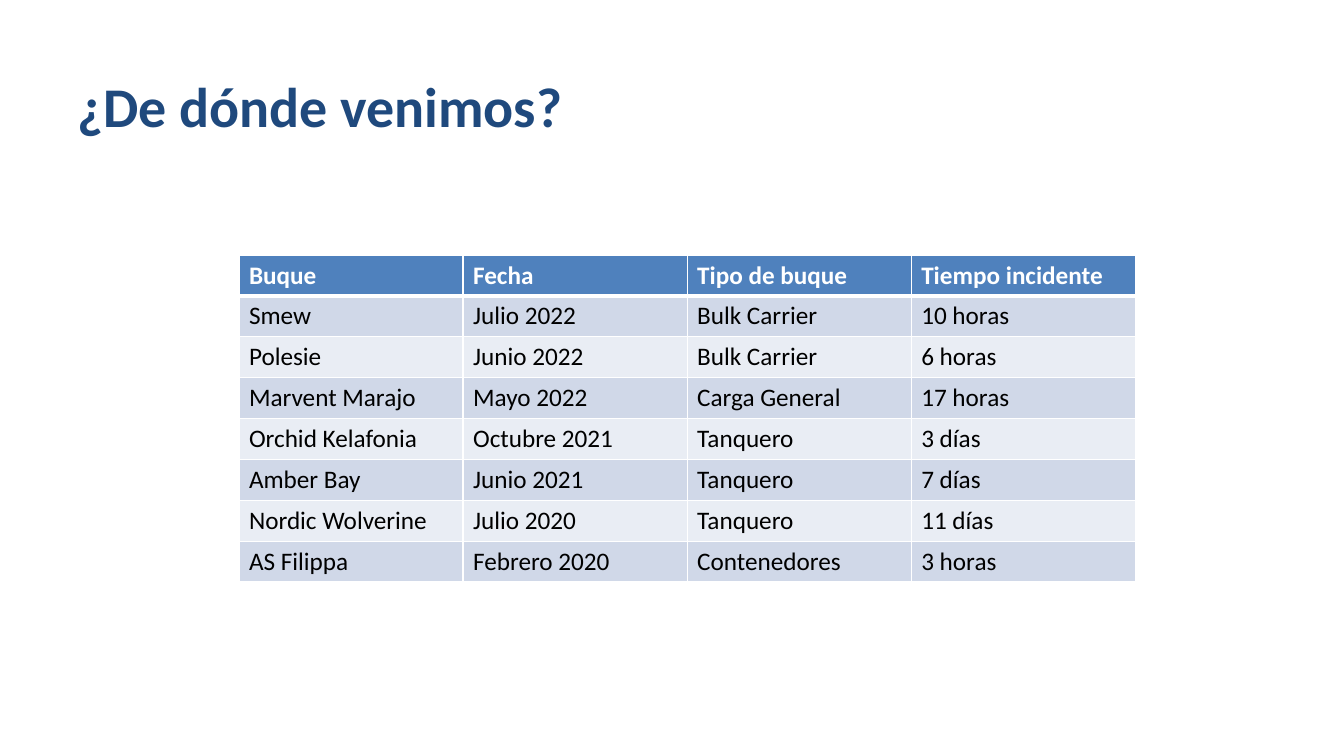
from pptx import Presentation
from pptx.dml.color import RGBColor
from pptx.enum.text import MSO_ANCHOR, MSO_AUTO_SIZE, PP_ALIGN
from pptx.oxml import parse_xml
from pptx.oxml.ns import nsdecls
from pptx.util import Inches, Pt

SHIPS = [
    ("Buque", "Fecha", "Tipo de buque", "Tiempo incidente"),
    ("Smew", "Julio 2022", "Bulk Carrier", "10 horas"),
    ("Polesie", "Junio 2022", "Bulk Carrier", "6 horas"),
    ("Marvent Marajo", "Mayo 2022", "Carga General", "17 horas"),
    ("Orchid Kelafonia", "Octubre 2021", "Tanquero", "3 días"),
    ("Amber Bay", "Junio 2021", "Tanquero", "7 días"),
    ("Nordic Wolverine", "Julio 2020", "Tanquero", "11 días"),
    ("AS Filippa", "Febrero 2020", "Contenedores", "3 horas"),
]
HEAD = "4F81BD"
BANDS = ("E9EDF4", "D0D8E8")


def color(code):
    return RGBColor.from_string(code)


def style(para, size, code, bold):
    font = para.font
    font.name, font.size, font.bold = "Calibri", Pt(size), bold
    font.color.rgb = color(code)


def add_title(slide, text, left, top, width, height):
    title = slide.shapes.title
    title.left, title.top = Inches(left), Inches(top)
    title.width, title.height = Inches(width), Inches(height)
    frame = title.text_frame
    frame.text = text
    frame.word_wrap = True
    frame.auto_size = MSO_AUTO_SIZE.NONE
    frame.vertical_anchor = MSO_ANCHOR.MIDDLE
    para = frame.paragraphs[0]
    para.alignment = PP_ALIGN.LEFT
    style(para, 40, "1F497D", True)


def add_edges(cell, widths):
    """Draw white borders; widths are points for left, right, top, bottom."""
    props = cell._tc.get_or_add_tcPr()
    for spot, (side, width) in enumerate(zip("LRTB", widths)):
        props.insert(spot, parse_xml(
            f'<a:ln{side} {nsdecls("a")} w="{Pt(width)}"><a:solidFill>'
            f'<a:srgbClr val="FFFFFF"/></a:solidFill></a:ln{side}>'))


def add_ships(slide, rows, left, top, width, height):
    count, span = len(rows), len(rows[0])
    table = slide.shapes.add_table(
        count, span, Inches(left), Inches(top), Inches(width), Inches(height)
    ).table
    for r, row in enumerate(rows):
        head = r == 0
        for c, text in enumerate(row):
            cell = table.cell(r, c)
            cell.text = text
            cell.fill.solid()
            cell.fill.fore_color.rgb = color(HEAD if head else BANDS[r % 2])
            add_edges(cell, (1, 1, 3 if r == 1 else 1, 3 if head else 1))
            style(cell.text_frame.paragraphs[0], 18,
                  "FFFFFF" if head else "000000", head)


def main():
    deck = Presentation()
    deck.slide_width, deck.slide_height = Inches(13.33), Inches(7.5)
    slide = deck.slides.add_slide(deck.slide_layouts[5])
    add_title(slide, "¿De dónde venimos?", 0.67, 0.29, 9.41, 1.5)
    add_ships(slide, SHIPS, 2.37, 2.53, 8.89, 3.24)
    deck.save("out.pptx")


if __name__ == "__main__":
    main()
